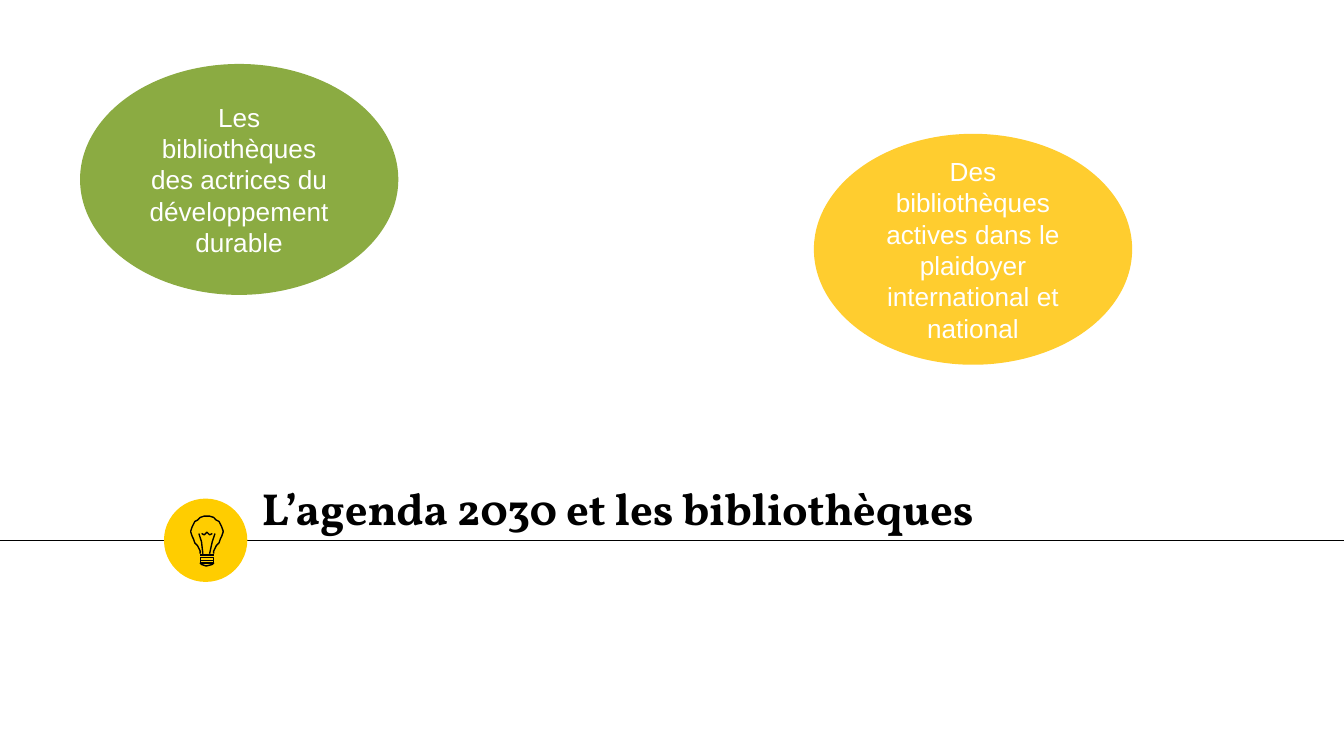
"""Build the title slide on the 2030 agenda and libraries."""
import pptx
import pptx.dml.color
import pptx.enum.shapes
import pptx.enum.text
import pptx.oxml
import pptx.util
from pptx.util import Inches

COLORS = {"black": "000000", "white": "FFFFFF", "badge": "FFCD00",
          "green": "8BAB42", "yellow": "FFCD2F"}
SHAPES = pptx.enum.shapes.MSO_SHAPE
ANCHORS = pptx.enum.text.MSO_ANCHOR


def rgb(name):
    return pptx.dml.color.RGBColor.from_string(COLORS[name])


def add_line(slide, left, right, y):
    line = slide.shapes.add_connector(
        pptx.enum.shapes.MSO_CONNECTOR.STRAIGHT,
        Inches(left), Inches(y), Inches(right), Inches(y))
    line.line.color.rgb = rgb("black")
    line.line.width = pptx.util.Pt(0.75)
    line._element.spPr.append(pptx.oxml.parse_xml(
        '<a:effectLst xmlns:a="http://schemas.openxmlformats.org/drawingml/2006/main"/>'))


presentation = pptx.Presentation()
presentation.slide_width = Inches(10)
presentation.slide_height = Inches(10) * 9 // 16
slide = presentation.slides.add_slide(presentation.slide_layouts[6])

add_line(slide, -0.01, 10.01, 4.02)

badge = slide.shapes.add_shape(
    SHAPES.OVAL, Inches(1.22), Inches(3.71), Inches(0.62), Inches(0.62))
badge.shadow.inherit = False
badge.fill.solid()
badge.fill.fore_color.rgb = rgb("badge")
badge.line.fill.background()

title = slide.shapes.add_textbox(Inches(1.85), Inches(3.16), Inches(6.61), Inches(0.92))
frame = title.text_frame
frame.word_wrap = True
frame.vertical_anchor = ANCHORS.BOTTOM
frame.margin_left = frame.margin_right = Inches(0.1)
frame.margin_top = frame.margin_bottom = Inches(0.1)
frame.text = "L’agenda 2030 et les bibliothèques"
font = frame.paragraphs[0].runs[0].font
font.name = "Vollkorn"
font.size = pptx.util.Pt(24)
font.bold = True
font.color.rgb = rgb("black")

bulb_center = 1.54
glass_half = [
    (0.05, 4.12), (0.05, 4.1), (0.06, 4.08), (0.07, 4.06), (0.09, 4.04),
    (0.1, 4.01), (0.11, 3.99), (0.12, 3.96), (0.12, 3.95), (0.11, 3.92),
    (0.1, 3.9), (0.09, 3.88), (0.07, 3.87), (0.05, 3.85), (0.02, 3.84), (0, 3.84)]
glass = [(bulb_center + x, y) for x, y in glass_half]
glass += [(bulb_center - x, y) for x, y in reversed(glass_half[:-1])]
bulb_outlines = [
    ([(1.49, top), (1.59, top), (1.59, top + 0.02), (1.49, top + 0.02)], True)
    for top in (4.17, 4.15)]
bulb_outlines += [
    ([(1.49, 4.19), (1.5, 4.2), (1.53, 4.21), (1.54, 4.21), (1.58, 4.2), (1.59, 4.19)], True),
    ([(1.51, 4.12), (1.5, 4.03), (1.48, 3.97)], False),
    (glass, False),
    ([(1.6, 3.97), (1.58, 4.03), (1.56, 4.12)], False),
    ([(1.5, 3.97), (1.52, 3.98), (1.54, 3.96), (1.56, 3.98), (1.58, 3.97)], False)]
for points, closed in bulb_outlines:
    corners = [(Inches(x), Inches(y)) for x, y in points]
    builder = slide.shapes.build_freeform(*corners[0])
    builder.add_line_segments(corners[1:], close=closed)
    outline = builder.convert_to_shape()
    outline.shadow.inherit = False
    outline.fill.background()
    outline.line.color.rgb = rgb("black")
    outline.line.width = pptx.util.Pt(0.75)

add_line(slide, 1.49, 1.59, 4.13)

ideas = [
    (0.61, 0.49, "green", "Les bibliothèques des actrices du développement durable"),
    (6.07, 1.01, "yellow",
     "Des bibliothèques actives dans le plaidoyer international et national")]
for left, top, color, text in ideas:
    bubble = slide.shapes.add_shape(
        SHAPES.OVAL, Inches(left), Inches(top), Inches(2.34), Inches(1.69))
    bubble.shadow.inherit = False
    bubble.fill.solid()
    bubble.fill.fore_color.rgb = rgb(color)
    bubble.line.color.rgb = rgb(color)
    bubble.line.width = pptx.util.Pt(2)
    frame = bubble.text_frame
    frame.word_wrap = True
    frame.vertical_anchor = ANCHORS.MIDDLE
    frame.text = text
    paragraph = frame.paragraphs[0]
    paragraph.alignment = pptx.enum.text.PP_ALIGN.CENTER
    font = paragraph.runs[0].font
    font.name = "Arial"
    font.size = pptx.util.Pt(14)
    font.color.rgb = rgb("white")

presentation.save("out.pptx")
